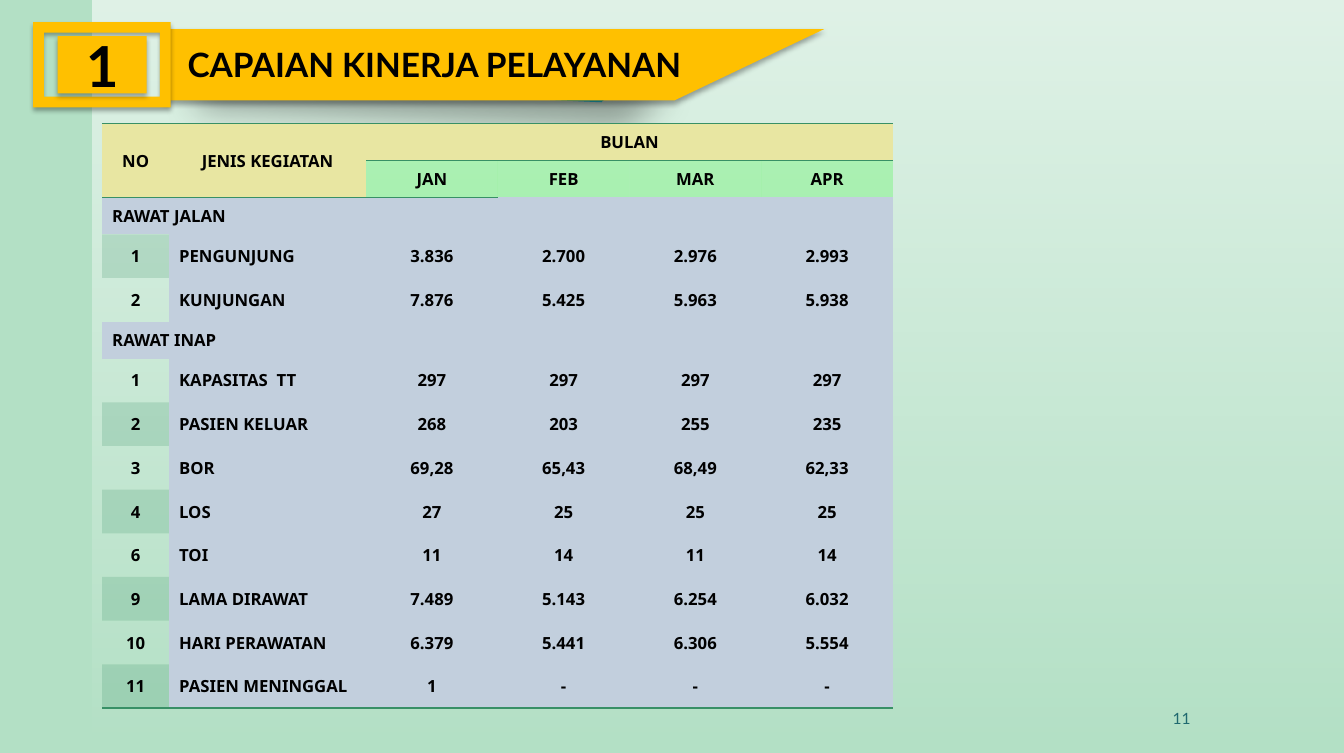
from lxml.etree import SubElement
from pptx import Presentation
from pptx.dml.color import RGBColor
from pptx.enum.shapes import MSO_SHAPE
from pptx.enum.text import MSO_ANCHOR, PP_ALIGN
from pptx.oxml.ns import qn
from pptx.util import Pt

BLACK = RGBColor(0x00, 0x00, 0x00)
WHITE = RGBColor(0xFF, 0xFF, 0xFF)
MINT = RGBColor(0xB3, 0xE0, 0xC5)
TEAL = RGBColor(0x1B, 0x91, 0xA1)
DARK_TEAL = RGBColor(0x1F, 0x69, 0x6F)
GOLD = RGBColor(0xFF, 0xC0, 0x00)
SAND = RGBColor(0xE8, 0xE6, 0xA2)
LIME = RGBColor(0x00, 0xFF, 0x00)
STEEL = RGBColor(0xC2, 0xCF, 0xDD)
GREEN = RGBColor(0x38, 0x90, 0x66)
NO_STYLE_NO_GRID = "{2D5ABB26-0587-4C30-8999-92F81FD0307C}"


def attach(parent, tag, **attributes):
    return SubElement(parent, qn(f"a:{tag}"), attributes)


def write(frame, text, font="Lato", size=12, color=BLACK, bold=True, align=PP_ALIGN.CENTER):
    frame.word_wrap = True
    frame.vertical_anchor = MSO_ANCHOR.MIDDLE
    para = frame.paragraphs[0]
    para.alignment = align
    span = para.add_run()
    span.text = text
    span.font.name = font
    span.font.size = Pt(size)
    span.font.bold = bold
    span.font.color.rgb = color


deck = Presentation()
deck.slide_width = Pt(964)
deck.slide_height = Pt(540)
page = deck.slides.add_slide(deck.slide_layouts[6])
page.background.fill.solid()
page.background.fill.fore_color.rgb = MINT

veil = page.shapes.add_shape(MSO_SHAPE.RECTANGLE, Pt(66), 0, Pt(898), Pt(540))
veil.shadow.inherit = False
veil.line.fill.background()
veil.fill.gradient()
veil.fill.gradient_angle = 270
for stop in veil.fill.gradient_stops:
    stop.color.rgb = WHITE
for color, alpha in zip(veil._element.spPr.iter(qn("a:srgbClr")), ("60000", "0")):
    attach(color, "alpha", val=alpha)

number_box = page.shapes.add_textbox(Pt(636.5), Pt(500.4), Pt(224.6), Pt(28.8))
write(number_box.text_frame, "11", size=11.1, color=DARK_TEAL, bold=False, align=PP_ALIGN.RIGHT)

outlines = [
    [(124.6, 25.2), (457.9, 40.3), (457.2, 50.4), (431.3, 73.4), (123.1, 59.8)],
    [(116.6, 20.9), (591.1, 20.9), (483.8, 72), (116.6, 72)],
]
banner = []
for outline in outlines:
    points = [(Pt(x), Pt(y)) for x, y in outline]
    builder = page.shapes.build_freeform(*points[0])
    builder.add_line_segments(points[1:], close=True)
    banner.append(builder.convert_to_shape())
banner.append(page.shapes.add_shape(MSO_SHAPE.FRAME, Pt(23.8), Pt(15.8), Pt(98.6), Pt(61.2)))
badge = page.shapes.add_shape(MSO_SHAPE.RECTANGLE, Pt(41.4), Pt(26), Pt(63.8), Pt(41))
banner.append(badge)

for box in banner:
    first = box is banner[0]
    blur, distance, angle, alpha = (25, 25, 45, 35) if first else (3.5, 2.2, 90, 32)
    box.fill.solid()
    box.fill.fore_color.rgb = TEAL if first else GOLD
    box.line.fill.background()
    box.shadow.inherit = False
    effects = box._element.spPr.find(qn("a:effectLst"))
    shadow = attach(effects, "outerShdw", blurRad=str(Pt(blur)), dist=str(Pt(distance)),
                    dir=str(angle * 60000), algn="tl", rotWithShape="0")
    attach(attach(shadow, "srgbClr", val=str(BLACK)), "alpha", val=str(alpha * 1000))

write(badge.text_frame, "1", size=40.5)
title_box = page.shapes.add_textbox(Pt(134.6), Pt(28.1), Pt(422.6), Pt(36))
title_box.text_frame.margin_left = 0
write(title_box.text_frame, "CAPAIAN KINERJA PELAYANAN", size=24, align=PP_ALIGN.LEFT)

rows = [
    ["NO", "JENIS KEGIATAN", "BULAN", "", "", ""],
    ["", "", "JAN", "FEB", "MAR", "APR"],
    ["RAWAT JALAN", "", "", "", "", ""],
    ["1", "PENGUNJUNG", "3.836", "2.700", "2.976", "2.993"],
    ["2", "KUNJUNGAN", "7.876", "5.425", "5.963", "5.938"],
    ["RAWAT INAP", "", "", "", "", ""],
    ["1", "KAPASITAS  TT", "297", "297", "297", "297"],
    ["2", "PASIEN KELUAR", "268", "203", "255", "235"],
    ["3", "BOR", "69,28", "65,43", "68,49", "62,33"],
    ["4", "LOS", "27", "25", "25", "25"],
    ["6", "TOI", "11", "14", "11", "14"],
    ["9", "LAMA DIRAWAT", "7.489", "5.143", "6.254", "6.032"],
    ["10", "HARI PERAWATAN", "6.379", "5.441", "6.306", "5.554"],
    ["11", "PASIEN MENINGGAL", "1", "-", "-", "-"],
]
sections = (2, 5)
last = len(rows) - 1
table = page.shapes.add_table(len(rows), 6, Pt(73.3), Pt(88.6), Pt(567.3), Pt(419.5)).table
table.first_row = False
table.horz_banding = False
table._tbl.tblPr.find(qn("a:tableStyleId")).text = NO_STYLE_NO_GRID
for column, width in zip(table.columns, [48, 141.3] + [94.5] * 4):
    column.width = Pt(width)

for r, texts in enumerate(rows):
    table.rows[r].height = Pt(26.5 if r < 2 or r in sections else 31.35)
    for c, text in enumerate(texts):
        cell = table.cell(r, c)
        cell.vertical_anchor = MSO_ANCHOR.MIDDLE
        if text:
            left = r in sections or (r > 1 and c == 1)
            write(cell.text_frame, text, font="Noto Sans",
                  align=PP_ALIGN.LEFT if left else PP_ALIGN.CENTER)
        else:
            attach(cell.text_frame.paragraphs[0]._p, "endParaRPr", sz="1200")

        properties = cell._tc.get_or_add_tcPr()
        sides = ["lnT"] if r == 0 else []
        if r in (0, last) or (r == 1 and c < 3):
            sides.append("lnB")
        for side in sides:
            line = attach(properties, side, w=str(Pt(1)))
            attach(attach(line, "solidFill"), "srgbClr", val=str(GREEN))

        numbered = r > 1 and r not in sections and c == 0
        if numbered and r % 2 == 0:
            cell.fill.background()
            continue
        month = r == 1 and c > 1
        cell.fill.solid()
        cell.fill.fore_color.rgb = GREEN if numbered else LIME if month else SAND if r < 2 else STEEL
        if numbered or month:
            attach(properties.find(qn("a:solidFill"))[0], "alpha", val="20000")

for top, start, bottom, end in [(0, 0, 1, 0), (0, 1, 1, 1), (0, 2, 0, 5), (2, 0, 2, 2), (5, 0, 5, 2)]:
    table.cell(top, start).merge(table.cell(bottom, end))

deck.save("out.pptx")
